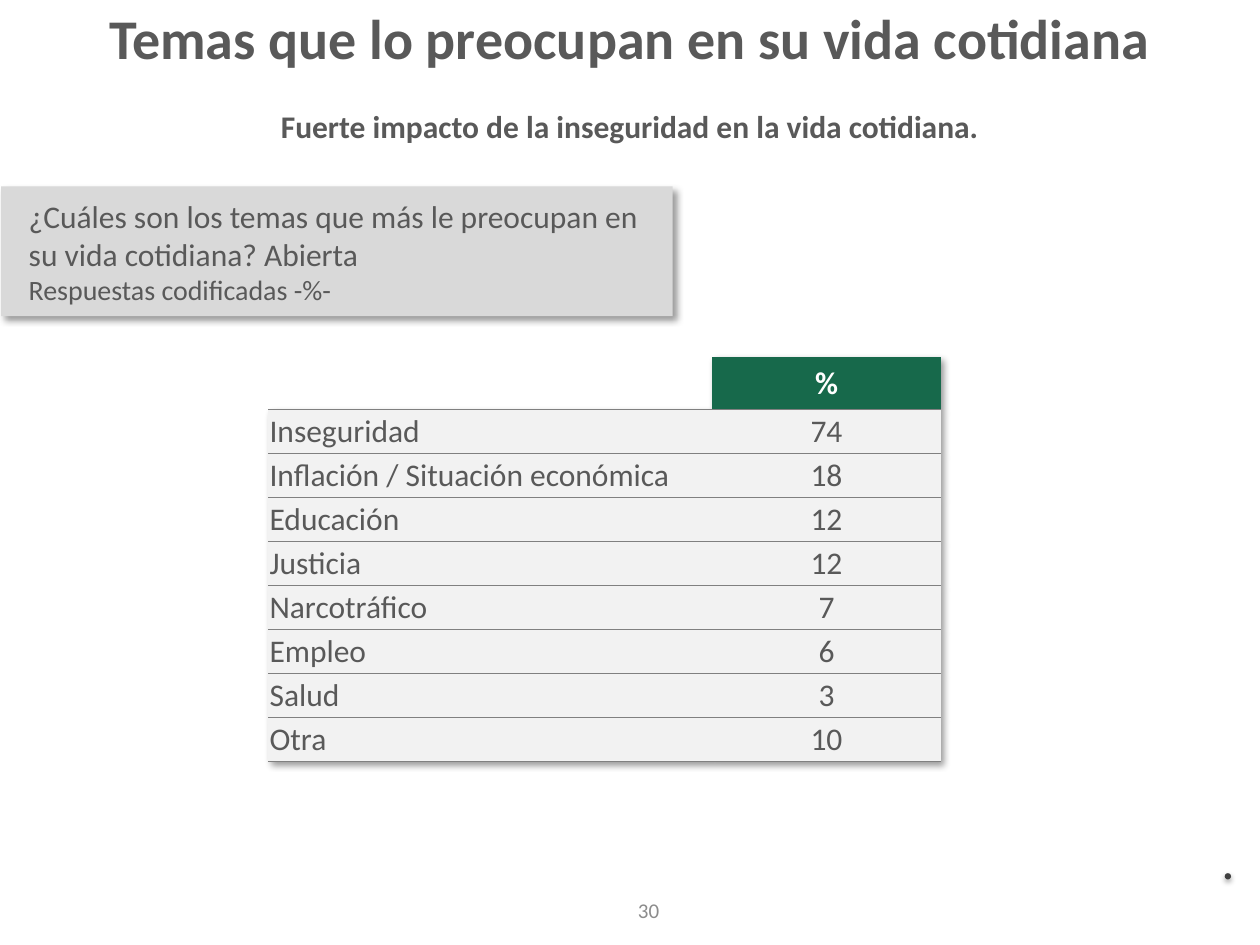
import pptx
import pptx.dml.color
import pptx.enum.shapes
import pptx.enum.text
import pptx.oxml
import pptx.oxml.ns
import pptx.util

COLORS = {
    "text": "595959", "number": "8C8C8C", "white": "FFFFFF", "green": "17694B",
    "row": "F2F2F2", "rule": "808080", "question": "D9D9D9", "dot": "404040",
    "shadow": "000000",
}
FONT = "Calibri"
NO_STYLE = "{2D5ABB26-0587-4C30-8999-92F81FD0307C}"
NAMESPACE = pptx.oxml.ns.nsdecls("a")
ALIGN = pptx.enum.text.PP_ALIGN
ANCHOR = pptx.enum.text.MSO_ANCHOR
SHAPE = pptx.enum.shapes.MSO_SHAPE

CONCERNS = [
    ("Inseguridad", 74), ("Inflación / Situación económica", 18),
    ("Educación", 12), ("Justicia", 12), ("Narcotráfico", 7),
    ("Empleo", 6), ("Salud", 3), ("Otra", 10),
]


def rgb(name):
    return pptx.dml.color.RGBColor.from_string(COLORS[name])


def write(paragraph, text, size=18, color="text", bold=False, align=ALIGN.LEFT):
    paragraph.alignment = align
    run = paragraph.add_run()
    run.text = text
    run.font.name = FONT
    run.font.size = pptx.util.Pt(size)
    run.font.bold = bold
    run.font.color.rgb = rgb(color)


def shadow_effect(opacity=40, blur=4, distance=3, angle=45):
    return pptx.oxml.parse_xml(
        f'<a:effectLst {NAMESPACE}><a:outerShdw blurRad="{pptx.util.Pt(blur)}" '
        f'dist="{pptx.util.Pt(distance)}" dir="{angle * 60000}" algn="tl" rotWithShape="0">'
        f'<a:srgbClr val="{COLORS["shadow"]}"><a:alpha val="{opacity * 1000}"/></a:srgbClr>'
        f'</a:outerShdw></a:effectLst>')


class Deck:
    """Slide laid out on a grid of 100 columns by 75 rows."""

    def __init__(self):
        self.show = pptx.Presentation()
        self.show.slide_width = pptx.util.Inches(10)
        self.show.slide_height = pptx.util.Inches(7.5)
        self.slide = self.show.slides.add_slide(self.show.slide_layouts[6])

    def across(self, columns):
        return round(self.show.slide_width * columns / 100)

    def down(self, rows):
        return round(self.show.slide_height * rows / 75)

    def place(self, left, top, width, height):
        return self.across(left), self.down(top), self.across(width), self.down(height)

    def text(self, area, text, anchor=ANCHOR.TOP, **style):
        frame = self.slide.shapes.add_textbox(*self.place(*area)).text_frame
        frame.word_wrap = True
        frame.vertical_anchor = anchor
        write(frame.paragraphs[0], text, **style)

    def shape(self, kind, area, fill, **shadow):
        figure = self.slide.shapes.add_shape(kind, *self.place(*area))
        figure.fill.solid()
        figure.fill.fore_color.rgb = rgb(fill)
        figure.line.fill.background()
        figure.shadow.inherit = False
        effects = figure._element.spPr.find(pptx.oxml.ns.qn("a:effectLst"))
        effects.append(shadow_effect(**shadow)[0])
        return figure

    def panel(self, area, fill, lines, indent):
        frame = self.shape(SHAPE.RECTANGLE, area, fill).text_frame
        frame.word_wrap = True
        frame.vertical_anchor = ANCHOR.MIDDLE
        for index, (text, size) in enumerate(lines):
            paragraph = frame.add_paragraph() if index else frame.paragraphs[0]
            write(paragraph, text, size=size)
            paragraph._p.get_or_add_pPr().set("marL", str(self.across(indent)))

    def cell(self, cell, text, fill, top_rule, **style):
        cell.margin_left = cell.margin_right = cell.margin_top = self.across(0.1)
        cell.margin_bottom = 0
        cell.vertical_anchor = ANCHOR.MIDDLE
        properties = cell._tc.get_or_add_tcPr()
        for side in ("lnT", "lnB") if top_rule else ("lnB",):
            properties.append(pptx.oxml.parse_xml(
                f'<a:{side} {NAMESPACE} w="{pptx.util.Pt(0.25)}"><a:solidFill>'
                f'<a:srgbClr val="{COLORS["rule"]}"/></a:solidFill></a:{side}>'))
        if fill:
            cell.fill.solid()
            cell.fill.fore_color.rgb = rgb(fill)
        else:
            cell.fill.background()
        if text:
            write(cell.text_frame.paragraphs[0], text, **style)

    def table(self, area, widths, header_height, row_height, heading, records):
        frame = self.slide.shapes.add_table(len(records) + 1, 2, *self.place(*area))
        table = frame.table
        table.first_row = table.horz_banding = False
        settings = table._tbl.tblPr
        settings.find(pptx.oxml.ns.qn("a:tableStyleId")).text = NO_STYLE
        settings.insert(0, shadow_effect())
        for column, width in zip(table.columns, widths):
            column.width = self.across(width)
        for index, row in enumerate(table.rows):
            row.height = self.down(row_height if index else header_height)

        self.cell(table.cell(0, 0), "", None, False)
        self.cell(table.cell(0, 1), heading, "green", False,
                  color="white", bold=True, align=ALIGN.CENTER)
        for row, (concern, percent) in enumerate(records, 1):
            self.cell(table.cell(row, 0), concern, "row", True)
            self.cell(table.cell(row, 1), str(percent), "row", True, align=ALIGN.CENTER)


def main():
    deck = Deck()

    # Page number
    deck.text((30, 69.5, 23.3, 5.5), "30", anchor=ANCHOR.MIDDLE,
              size=12, color="number", align=ALIGN.RIGHT)

    # Answers
    deck.table((21.3, 28.3, 53.4, 32.1), widths=(35.2, 18.2), header_height=4.2,
               row_height=3.49, heading="%", records=CONCERNS)

    # Question
    deck.panel((0.1, 14.8, 53.3, 10.3), "question", [
        ("¿Cuáles son los temas que más le preocupan en su vida cotidiana? Abierta", 18),
        ("Respuestas codificadas -%-", 16),
    ], indent=1.2)

    # Title and main finding
    deck.text((0, -0.2, 100, 6.4), "Temas que lo preocupan en su vida cotidiana",
              size=32, bold=True, align=ALIGN.CENTER)
    deck.text((0, 8, 100, 4), "Fuerte impacto de la inseguridad en la vida cotidiana.",
              bold=True, align=ALIGN.CENTER)

    # Corner dot
    deck.shape(SHAPE.OVAL, (97.2, 69.3, 0.5, 0.5), "dot",
               opacity=38, blur=3.1, distance=1.6, angle=90)

    deck.show.save("out.pptx")


if __name__ == "__main__":
    main()
